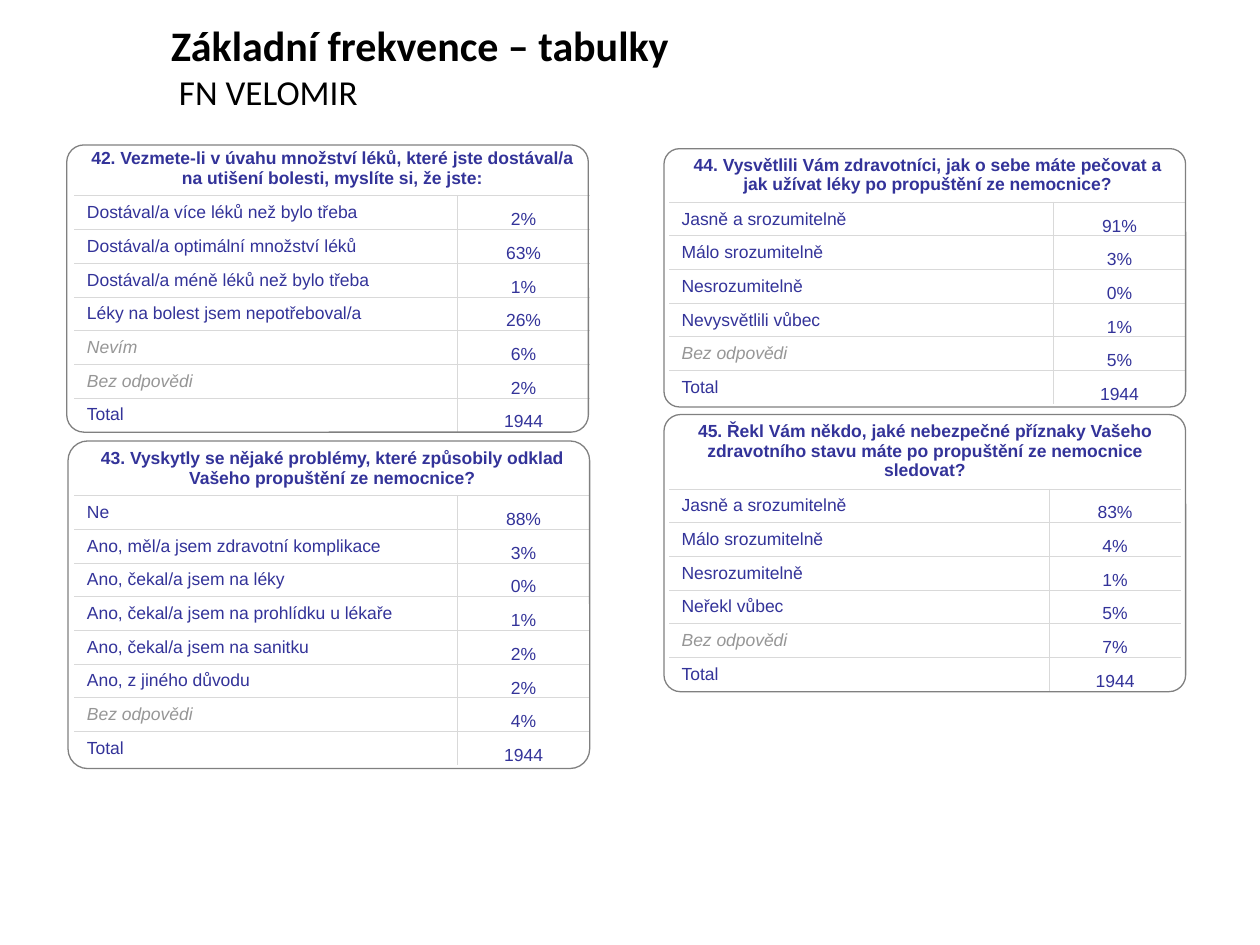
from lxml import etree
from pptx import Presentation
from pptx import util as u
from pptx.dml.color import RGBColor
from pptx.enum import shapes, text
from pptx.oxml.ns import qn

HUES = {"ink": "333399", "mute": "969696", "rule": "D9D9D9",
        "edge": "808080", "black": "000000", "white": "FFFFFF"}

# Grid: 100 columns by 75 rows of square units
WIDE, HIGH = u.Inches(10), u.Inches(7.5)
UNIT = WIDE / 100
ROW, TWO, THREE = 2.56, 4.12, 5.67  # answer row, two- and three-line heads

MID, LOW = text.MSO_ANCHOR.MIDDLE, text.MSO_ANCHOR.BOTTOM
CENTRE = text.PP_ALIGN.CENTER
THIN = {"margin_left": u.Inches(0.01), "margin_right": u.Inches(0.01),
        "margin_top": u.Inches(0.01), "margin_bottom": 0}
BODY = {"name": "Arial", "size": u.Pt(10), "bold": False, "italic": False}

# Frame box, table left and top, column widths, head height, question, answers
CARDS = [
    ((5.3, 11.5, 41.4, 22.8), (5.9, 11.2), (30.4, 10.5), TWO,
     "42. Vezmete-li v úvahu množství léků, které jste dostával/a "
     "na utišení bolesti, myslíte si, že jste:",
     [("Dostával/a více léků než bylo třeba", "2%"),
      ("Dostával/a optimální množství léků", "63%"),
      ("Dostával/a méně léků než bylo třeba", "1%"),
      ("Léky na bolest jsem nepotřeboval/a", "26%"),
      ("Nevím", "6%"), ("Bez odpovědi", "2%"), ("Total", "1944")]),
    ((5.4, 35, 41.4, 26), (5.9, 35), (30.4, 10.5), TWO,
     "43. Vyskytly se nějaké problémy, které způsobily odklad "
     "Vašeho propuštění ze nemocnice?",
     [("Ne", "88%"), ("Ano, měl/a jsem zdravotní komplikace", "3%"),
      ("Ano, čekal/a jsem na léky", "0%"),
      ("Ano, čekal/a jsem na prohlídku u lékaře", "1%"),
      ("Ano, čekal/a jsem na sanitku", "2%"),
      ("Ano, z jiného důvodu", "2%"),
      ("Bez odpovědi", "4%"), ("Total", "1944")]),
    ((52.7, 11.8, 41.4, 20.5), (53.1, 11.7), (30.5, 10.5), TWO,
     "44. Vysvětlili Vám zdravotníci, jak o sebe máte pečovat a "
     "jak užívat léky po propuštění ze nemocnice?",
     [("Jasně a srozumitelně", "91%"), ("Málo srozumitelně", "3%"),
      ("Nesrozumitelně", "0%"), ("Nevysvětlili vůbec", "1%"),
      ("Bez odpovědi", "5%"), ("Total", "1944")]),
    ((52.7, 32.9, 41.4, 22), (53.1, 32.8), (30.2, 10.4), THREE,
     "45. Řekl Vám někdo, jaké nebezpečné příznaky Vašeho "
     "zdravotního stavu máte po propuštění ze nemocnice sledovat?",
     [("Jasně a srozumitelně", "83%"), ("Málo srozumitelně", "4%"),
      ("Nesrozumitelně", "1%"), ("Neřekl vůbec", "5%"),
      ("Bez odpovědi", "7%"), ("Total", "1944")]),
]


def span(*units):
    return [u.Emu(round(n * UNIT)) for n in units]


def tint(name):
    return RGBColor.from_string(HUES[name])


def apply(item, form):
    for key, val in form.items():
        setattr(item, key, val)


def add_run(para, words, hue, form):
    run = para.add_run()
    run.text = words
    apply(run.font, form)
    run.font.color.rgb = tint(hue)


def rule_cell(cell, sides):
    """Draw hairlines on the named sides and none on the others."""
    props = cell._tc.get_or_add_tcPr()
    for side in "LRTB":
        line = etree.SubElement(props, qn("a:ln" + side), w=str(u.Pt(0.5)))
        if side in sides:
            fill = etree.SubElement(line, qn("a:solidFill"))
            etree.SubElement(fill, qn("a:srgbClr"), val=HUES["rule"])
        else:
            etree.SubElement(line, qn("a:noFill"))


def fill_cell(cell, words, sides, hue="ink", font=None, form=None,
              align=None, solid=True):
    rule_cell(cell, sides)
    if solid:
        cell.fill.solid()
        cell.fill.fore_color.rgb = tint("white")
    else:
        cell.fill.background()
    apply(cell, {"vertical_anchor": MID} | (form or {}))
    para = cell.text_frame.paragraphs[0]
    para.alignment = align
    add_run(para, words, hue, BODY | (font or {}))


def add_grid(slide, spot, cols, head, ask, rows):
    size = (sum(cols), head + ROW * len(rows))
    grid = slide.shapes.add_table(len(rows) + 1, 2, *span(*spot, *size)).table
    apply(grid, {"first_row": False, "horz_banding": False})
    for col, wide in zip(grid.columns, span(*cols)):
        col.width = wide
    for row, high in zip(grid.rows, span(head, *[ROW] * len(rows))):
        row.height = high

    # Question across both columns
    grid.cell(0, 0).merge(grid.cell(0, 1))
    rule_cell(grid.cell(0, 1), "B")
    fill_cell(grid.cell(0, 0), ask, "B", font={"bold": True},
              align=CENTRE, solid=False)

    # Answers; the last row has no line below
    for i, (label, share) in enumerate(rows, 1):
        base = "T" if i == len(rows) else "TB"
        mute = label in ("Nevím", "Bez odpovědi")
        fill_cell(grid.cell(i, 0), label, base + "R",
                  "mute" if mute else "ink", {"italic": mute})
        fill_cell(grid.cell(i, 1), share, base + "L",
                  form=THIN | {"vertical_anchor": LOW}, align=CENTRE)


def add_frame(slide, box):
    frame = slide.shapes.add_shape(
        shapes.MSO_SHAPE.ROUNDED_RECTANGLE, *span(*box))
    frame.adjustments[0] = 0.06
    frame.shadow.inherit = False
    frame.fill.background()
    frame.line.color.rgb = tint("edge")
    frame.line.width = u.Pt(0.75)


def add_title(slide):
    body = slide.shapes.add_textbox(*span(12.6, 1.4, 87.4, 7.7)).text_frame
    apply(body, {"word_wrap": True, "vertical_anchor": MID})
    para = body.paragraphs[0]
    font = {"name": "Calibri"}
    add_run(para, "Základní frekvence – tabulky ", "black",
            font | {"size": u.Pt(24), "bold": True})
    para.add_line_break()
    add_run(para, " FN VELOMIR", "black",
            font | {"size": u.Pt(20), "bold": False})


def main():
    deck = Presentation()
    apply(deck, {"slide_width": WIDE, "slide_height": HIGH})
    slide = deck.slides.add_slide(deck.slide_layouts[6])
    add_title(slide)
    for box, *grid in CARDS:
        add_grid(slide, *grid)
        add_frame(slide, box)
    deck.save("out.pptx")


if __name__ == "__main__":
    main()
